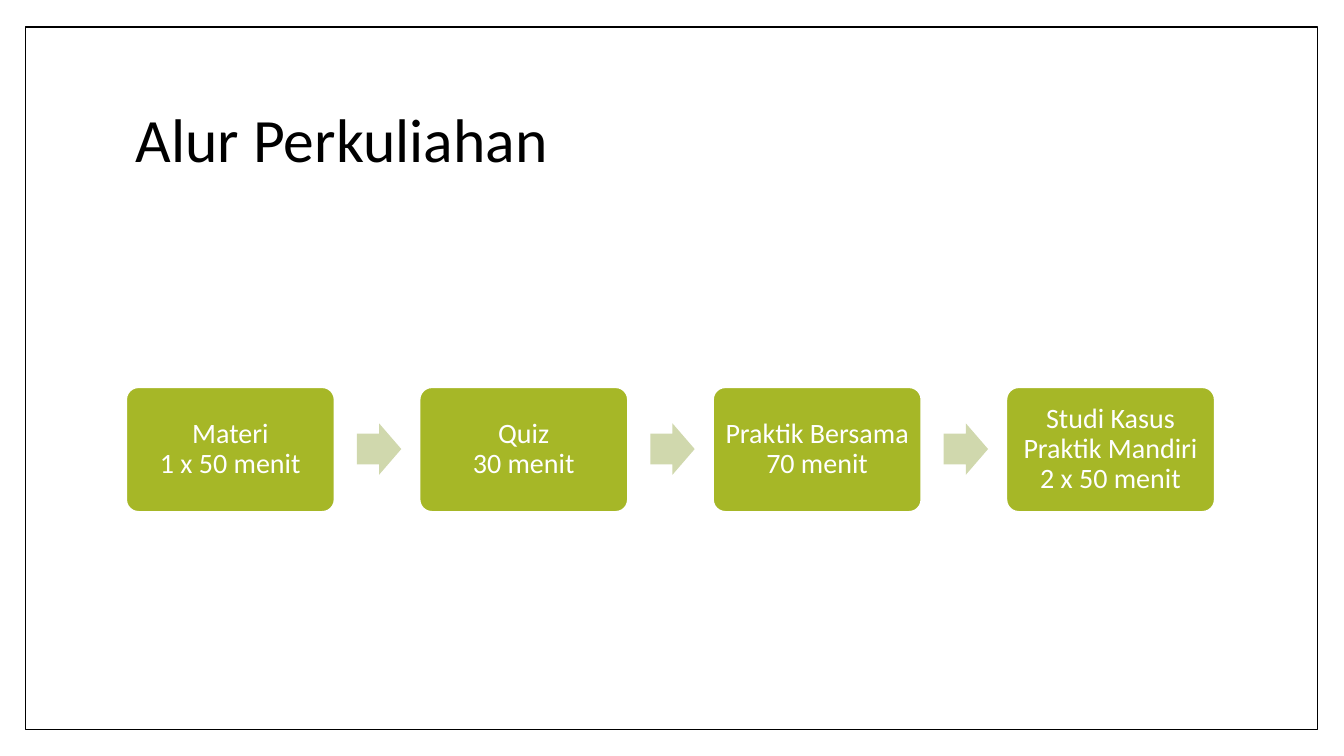
from dataclasses import dataclass

import pptx
import pptx.dml.color
import pptx.enum.shapes
import pptx.enum.text
import pptx.util

Inches = pptx.util.Inches
Pt = pptx.util.Pt
Shapes = pptx.enum.shapes.MSO_SHAPE
Align = pptx.enum.text.PP_ALIGN

COLORS = {
    "white": "FFFFFF",
    "black": "000000",
    "step": "A6B727",
    "arrow": "D0D8AD",
}
FONT = "Calibri"

CONTENT_LEFT, CONTENT_WIDTH = 1.25, 10.8
STEP_TOP, STEP_WIDTH, STEP_HEIGHT = 3.84, 2.07, 1.24
ARROW_OFFSET, ARROW_TOP, ARROW_WIDTH, ARROW_HEIGHT = 2.29, 4.2, 0.44, 0.51


@dataclass
class Step:
    activity: str
    duration: str


STEPS = [
    Step("Materi", "1 x 50 menit"),
    Step("Quiz", "30 menit"),
    Step("Praktik Bersama", "70 menit"),
    Step("Studi Kasus Praktik Mandiri", "2 x 50 menit"),
]


def rgb(name: str) -> pptx.dml.color.RGBColor:
    return pptx.dml.color.RGBColor.from_string(COLORS[name])


def add_box(page, kind, left: float, top: float, width: float, height: float,
            fill: str, line: str = "", line_width: float = 1):
    """Add a flat preset shape; an empty line name means no outline."""
    box = page.shapes.add_shape(
        kind, Inches(left), Inches(top), Inches(width), Inches(height))
    box.shadow.inherit = False
    box.fill.solid()
    box.fill.fore_color.rgb = rgb(fill)
    if line:
        box.line.color.rgb = rgb(line)
        box.line.width = Pt(line_width)
    else:
        box.line.fill.background()
    return box


def write_lines(box, lines: list[str], size: float, color: str, align) -> None:
    """Write one middle-anchored paragraph with a line break between lines."""
    frame = box.text_frame
    frame.word_wrap = True
    frame.vertical_anchor = pptx.enum.text.MSO_ANCHOR.MIDDLE
    para = frame.paragraphs[0]
    para.alignment = align
    para.line_spacing = 0.9
    for index, line in enumerate(lines):
        if index:
            para.add_line_break()
        span = para.add_run()
        span.text = line
        span.font.name = FONT
        span.font.size = Pt(size)
        span.font.color.rgb = rgb(color)


def add_title(page, title: str) -> None:
    box = page.shapes.add_textbox(
        Inches(CONTENT_LEFT), Inches(0.67), Inches(CONTENT_WIDTH), Inches(1.48))
    write_lines(box, [title], 44, "black", Align.LEFT)


def add_step(page, step: Step, left: float) -> None:
    box = add_box(page, Shapes.ROUNDED_RECTANGLE, left, STEP_TOP,
                  STEP_WIDTH, STEP_HEIGHT, "step", "white", 1.5)
    box.adjustments[0] = 0.1
    frame = box.text_frame
    frame.margin_left = frame.margin_right = Inches(0.07)
    frame.margin_top = frame.margin_bottom = Inches(0.07)
    write_lines(box, [step.activity, step.duration], 20, "white", Align.CENTER)


def add_arrow(page, left: float) -> None:
    arrow = add_box(page, Shapes.RIGHT_ARROW, left, ARROW_TOP,
                    ARROW_WIDTH, ARROW_HEIGHT, "arrow")
    arrow.adjustments[0] = 0.6
    arrow.adjustments[1] = 0.5


def main() -> None:
    deck = pptx.Presentation()
    deck.slide_width, deck.slide_height = Inches(13.33), Inches(7.5)
    page = deck.slides.add_slide(deck.slide_layouts[6])

    add_box(page, Shapes.RECTANGLE, 0.25, 0.27, 12.82, 6.97, "white", "black")
    add_title(page, "Alur Perkuliahan")

    pitch = (CONTENT_WIDTH - STEP_WIDTH) / (len(STEPS) - 1)
    for index, step in enumerate(STEPS):
        left = CONTENT_LEFT + index * pitch
        add_step(page, step, left)
        if index < len(STEPS) - 1:
            add_arrow(page, left + ARROW_OFFSET)

    deck.save("out.pptx")


if __name__ == "__main__":
    main()
